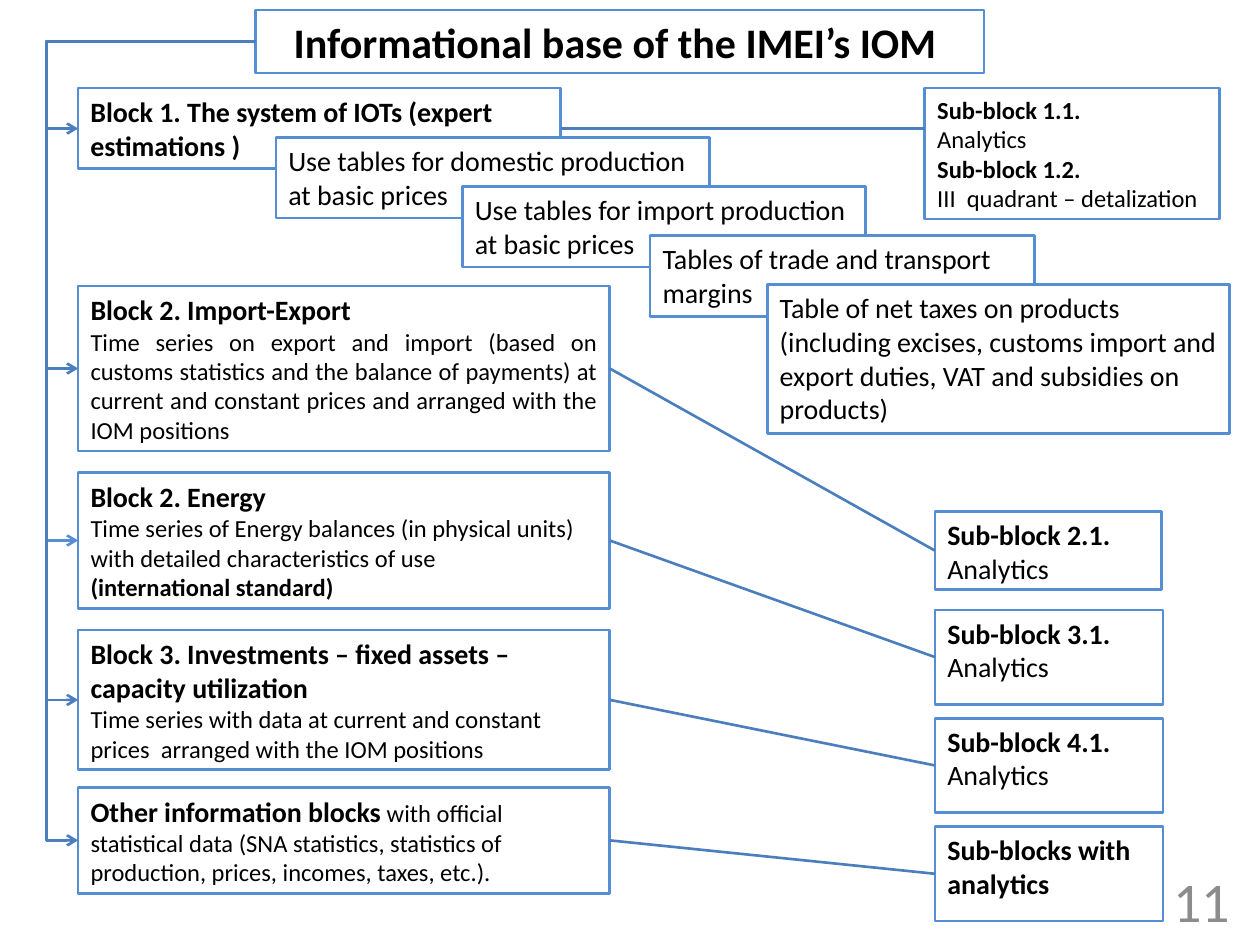
from lxml import etree
from pptx import Presentation
from pptx import util as u
from pptx.dml.color import RGBColor
from pptx.enum import shapes, text
from pptx.oxml.ns import qn

BLACK = RGBColor(0x00, 0x00, 0x00)
WHITE = RGBColor(0xFF, 0xFF, 0xFF)
GRAY = RGBColor(0x8C, 0x8C, 0x8C)
BORDER = RGBColor(0x55, 0x8E, 0xD5)
LINK = RGBColor(0x4B, 0x7E, 0xBC)
TOP, MIDDLE = text.MSO_ANCHOR.TOP, text.MSO_ANCHOR.MIDDLE
LEFT, JUSTIFY = text.PP_ALIGN.LEFT, text.PP_ALIGN.JUSTIFY
STRAIGHT, ELBOW = shapes.MSO_CONNECTOR.STRAIGHT, shapes.MSO_CONNECTOR.ELBOW

prs = Presentation()
prs.slide_width, prs.slide_height = u.Inches(10), u.Inches(7.5)
s = prs.slides.add_slide(prs.slide_layouts[5])


def add_box(x, y, w, h, paragraphs, anchor=MIDDLE, align=LEFT, fill=None, sp=None):
    """Outlined box; each paragraph is a list of (text, size, bold) runs.

    An sp that is passed in is placed and formatted instead of a new rectangle.
    """
    if sp is None:
        sp = s.shapes.add_shape(shapes.MSO_SHAPE.RECTANGLE, 0, 0, 0, 0)
        sp.shadow.inherit = False
    sp.left, sp.top, sp.width, sp.height = [u.Inches(v) for v in (x, y, w, h)]
    if fill is None:
        sp.fill.background()
    else:
        sp.fill.solid()
        sp.fill.fore_color.rgb = fill
    sp.line.color.rgb = BORDER
    sp.line.width = u.Pt(1.5)
    tf = sp.text_frame
    tf.word_wrap = True
    tf.auto_size = text.MSO_AUTO_SIZE.NONE
    tf.vertical_anchor = anchor
    for i, runs in enumerate(paragraphs):
        p = tf.add_paragraph() if i else tf.paragraphs[0]
        p.alignment = align
        for words, size, bold in runs:
            r = p.add_run()
            r.text = words
            r.font.name = "Calibri"
            r.font.size = u.Pt(size)
            r.font.bold = bold
            r.font.color.rgb = BLACK
    return sp


def add_link(kind, start, start_site, color=LINK):
    cxn = s.shapes.add_connector(kind, 0, 0, 0, 0)
    cxn.begin_connect(start, start_site)
    cxn.line.color.rgb = color
    cxn.line.width = u.Pt(1.5)
    etree.SubElement(cxn._element.spPr, qn("a:effectLst"))
    return cxn


title = add_box(2.03, 0.08, 5.78, 0.5, [[("Informational base of the IMEI’s IOM ", 24, True)]],
                align=text.PP_ALIGN.CENTER, sp=s.shapes.title)

block1 = add_box(0.62, 0.7, 3.83, 0.64,
                 [[("Block 1. The system of IOTs (expert estimations )", 16, True)]])
add_box(7.34, 0.7, 2.34, 1.04, [
    [("Sub-block 1.1.", 14, True)],
    [("Analytics", 14, False)],
    [("Sub-block 1.2.", 14, True)],
    [("III  quadrant – detalization", 14, False)],
])

# Cascade of overlapping tables
tables = [
    (2.19, 3.44, 0.64, "Use tables for domestic production at basic prices"),
    (3.67, 3.2, 0.64, "Use tables for import production at basic prices"),
    (5.16, 3.05, 0.64, "Tables of trade and transport margins"),
    (6.09, 3.67, 1.18, "Table of net taxes on products (including excises, customs import "
                       "and export duties, VAT and subsidies on products)"),
]
for i, (x, w, h, words) in enumerate(tables):
    add_box(x, 1.09 + 0.39 * i, w, h, [[(words, 16, False)]], TOP, fill=WHITE)

# Left column of blocks
block_rows = [
    (2.27, 1.31, JUSTIFY, [
        [("Block 2. Import-Export", 16, True)],
        [("Time series on export and import (based on customs statistics and the balance of "
          "payments) at current and constant prices and arranged with the IOM positions",
          14, False)]]),
    (3.75, 1.08, LEFT, [
        [("Block 2. Energy", 16, True)],
        [("Time series of Energy balances (in physical units) with detailed characteristics "
          "of use", 14, False)],
        [("(international standard)", 14, True)]]),
    (5, 1.11, LEFT, [
        [("Block 3. Investments – fixed assets – capacity utilization", 16, True)],
        [("Time series with data at current and constant prices  arranged with the IOM "
          "positions", 14, False)]]),
    (6.25, 0.84, LEFT, [
        [("Other information blocks", 16, True),
         (" with official statistical data (SNA statistics, statistics of production, prices, "
          "incomes, taxes, etc.).", 14, False)]]),
]
blocks = [add_box(0.62, y, 4.22, h, paragraphs, align=align)
          for y, h, align, paragraphs in block_rows]

# Right column of sub-blocks
sub_blocks = [add_box(7.42, 4.06, 1.8, 0.62, [
    [("Sub-block 2.1.", 16, True)], [("Analytics", 16, False)]], TOP, fill=WHITE)]
sub_rows = [
    [[("Sub-block 3.1.", 16, True)], [("Analytics", 16, False)]],
    [[("Sub-block 4.1.", 16, True)], [("Analytics", 16, False)]],
    [[("Sub-blocks with analytics", 16, True)]],
]
for i, paragraphs in enumerate(sub_rows):
    sub_blocks.append(add_box(7.42, 4.84 + 0.86 * i, 1.81, 0.75, paragraphs, TOP, fill=WHITE))

# Arrows from the title down the left margin to every block
for i, block in enumerate([block1] + blocks):
    cxn = add_link(ELBOW, title, 1, BORDER if i == 2 else LINK)
    cxn.end_connect(block, 1)
    guides = cxn._element.spPr.find(qn("a:prstGeom")).get_or_add_avLst()
    etree.SubElement(guides, qn("a:gd"), name="adj1", fmla="val 117800")
    etree.SubElement(cxn.line._get_or_add_ln(), qn("a:tailEnd"), type="arrow")

for block, sub_block in zip(blocks, sub_blocks):
    add_link(STRAIGHT, block, 3).end_connect(sub_block, 1)
cxn = add_link(STRAIGHT, block1, 3)
cxn.end_x, cxn.end_y = u.Inches(7.34), u.Inches(1.02)

number = s.shapes.add_textbox(u.Inches(7.53), u.Inches(6.94), u.Inches(2.33), u.Inches(0.4))
tf = number.text_frame
tf.word_wrap = True
tf.vertical_anchor = MIDDLE
p = tf.paragraphs[0]
p.alignment = text.PP_ALIGN.RIGHT
r = p.add_run()
r.text = "11"
r.font.name = "Calibri"
r.font.size = u.Pt(32)
r.font.color.rgb = GRAY

prs.save("out.pptx")
